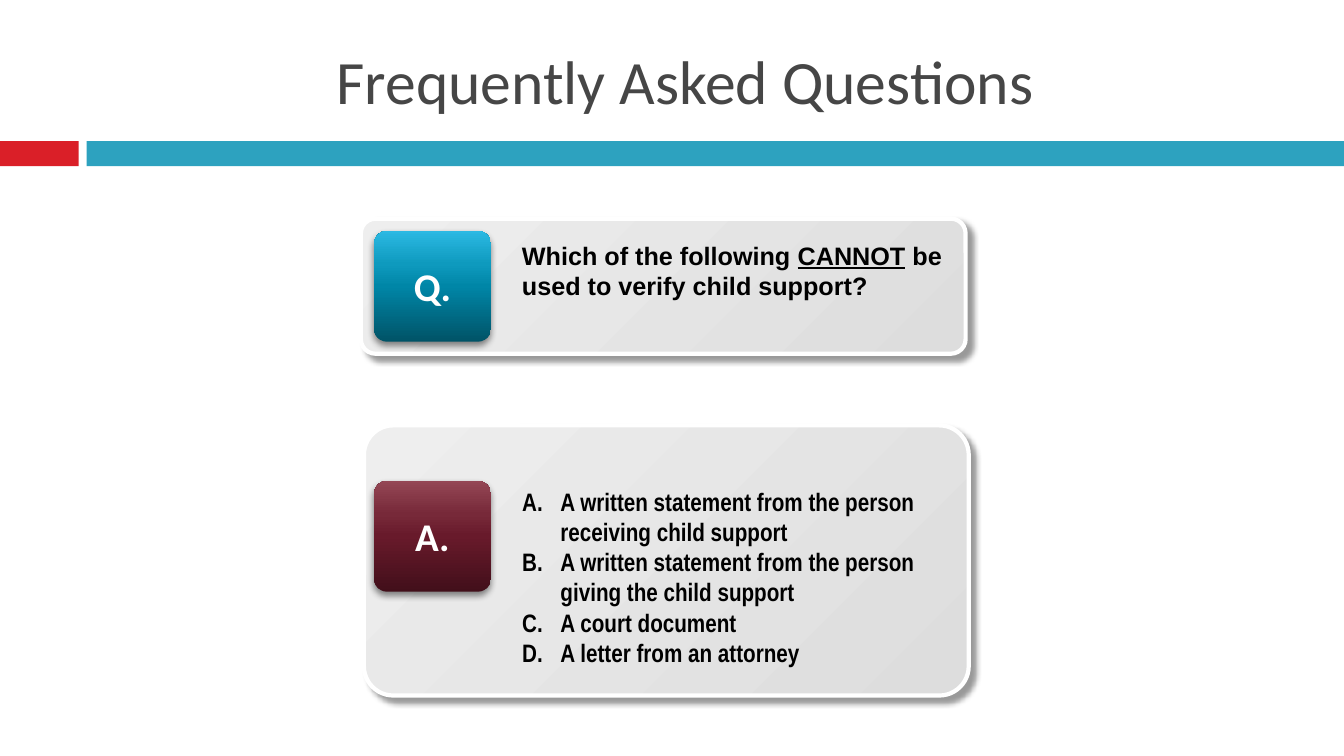
from lxml.etree import SubElement
from pptx import Presentation
from pptx.dml.color import RGBColor
from pptx.enum.shapes import MSO_SHAPE as Preset
from pptx.enum.text import MSO_ANCHOR as Anchor, MSO_AUTO_SIZE as AutoSize, PP_ALIGN as Align
from pptx.oxml.ns import qn
from pptx.util import Inches, Pt

SLIDE_WIDTH, SLIDE_HEIGHT = Inches(13.333), Inches(7.5)
COLORS = {"red": "DA1F28", "teal": "2DA2BF", "title": "464646", "white": "FFFFFF", "black": "000000"}
GRADIENTS = {
    "card": {0: "EEEEEE", 100: "DDDDDD"},
    "question": {0: "005367", 50: "0086A7", 70: "0E9ABE", 100: "2CB9E3"},
    "answer": {0: "420F1A", 50: "681A2B", 70: "772939", 100: "944755"},
}
QUESTION = [("Which of the following ", False), ("CANNOT", True), (" be used to verify child support?", False)]
ANSWERS = [
    "A written statement from the person receiving child support",
    "A written statement from the person giving the child support",
    "A court document",
    "A letter from an attorney",
]
QUESTION_CARD = (26.85, 28.93, 45, 17.87)
ANSWER_CARD = (27.08, 56.27, 45, 35.73)
BADGE_SIZE = (8.7, 14.67)
TEXT_GAP = 1.57
TEXT_WIDTH = 33


def to_lengths(box):
    """Turn a box in percent of the slide into lengths."""
    left, top, width, height = box
    return [int(share * side / 100) for share, side in
            ((left, SLIDE_WIDTH), (top, SLIDE_HEIGHT), (width, SLIDE_WIDTH), (height, SLIDE_HEIGHT))]


def place(shape, box):
    """Move a shape to a box."""
    shape.left, shape.top, shape.width, shape.height = to_lengths(box)


def style_font(font, name, size, color, bold=False):
    """Set the face, size, colour and weight of a font."""
    font.name, font.size, font.bold = name, Pt(size), bold
    font.color.rgb = RGBColor.from_string(COLORS[color])


def add_color(parent, color, alpha=100):
    """Add a colour with its opacity to an XML element."""
    element = SubElement(parent, qn("a:srgbClr"), val=color)
    SubElement(element, qn("a:alpha"), val=str(alpha * 1000))


def add_glossy_box(slide, box, corner, gradient, angle, shadow):
    """Add a rounded box with a gradient and a drop shadow."""
    shape = slide.shapes.add_shape(Preset.ROUNDED_RECTANGLE, *to_lengths(box))
    shape.adjustments[0] = corner
    properties = shape.element.spPr
    fill = SubElement(properties, qn("a:gradFill"), rotWithShape="1")
    stops = SubElement(fill, qn("a:gsLst"))
    for position, color in GRADIENTS[gradient].items():
        add_color(SubElement(stops, qn("a:gs"), pos=str(position * 1000)), color)
    SubElement(fill, qn("a:lin"), ang=str(angle * 60000), scaled="0")
    shape.line.fill.background()
    shape.shadow.inherit = False
    alpha, blur, distance, direction = shadow
    outer = SubElement(properties.find(qn("a:effectLst")), qn("a:outerShdw"),
                       blurRad=str(Pt(blur)), dist=str(Pt(distance)),
                       dir=str(direction * 60000), algn="ctr", rotWithShape="0")
    add_color(outer, COLORS["black"], alpha)
    return shape


def add_header(slide, box):
    """Place the title and the two bars below it."""
    left, top, width, height = box
    title = slide.shapes.title
    place(title, (left + 17.55, top + 3.33, 66.9, 14.4))
    title.text_frame.text = "Frequently Asked Questions"
    title.text_frame.vertical_anchor = Anchor.MIDDLE
    paragraph = title.text_frame.paragraphs[0]
    paragraph.alignment = Align.CENTER
    style_font(paragraph.font, "Calibri", 44, "title")
    bar_height = 3.33
    for color, start, end in (("red", 0, 5.85), ("teal", 6.45, width)):
        bar_box = (left + start, top + height - bar_height, end - start, bar_height)
        bar = slide.shapes.add_shape(Preset.RECTANGLE, *to_lengths(bar_box))
        bar.fill.solid()
        bar.fill.fore_color.rgb = RGBColor.from_string(COLORS[color])
        bar.line.fill.background()
        bar.shadow.inherit = False


def add_card(slide, box, inset, letter, gradient):
    """Draw a card with its letter badge and return the corner for its text."""
    card = add_glossy_box(slide, box, 0.109, "card", 45, (40, 4, 5, 45))
    card.line.color.rgb = RGBColor.from_string(COLORS["white"])
    card.line.width = Pt(3)
    left, top = box[0] + inset[0], box[1] + inset[1]
    badge = add_glossy_box(slide, (left, top, *BADGE_SIZE), 0.119, gradient, 270, (45, 5, 3, 90))
    frame = badge.text_frame
    frame.word_wrap = False
    frame.vertical_anchor = Anchor.MIDDLE
    frame.text = letter
    paragraph = frame.paragraphs[0]
    paragraph.alignment = Align.CENTER
    style_font(paragraph.font, "Calibri", 28, "white", True)
    return left + BADGE_SIZE[0] + TEXT_GAP, top


def add_question(slide, box):
    """Fill the question card."""
    left, top = add_card(slide, box, (0.98, 1.6), "Q.", "question")
    text_box = slide.shapes.add_textbox(*to_lengths((left, top + 0.54, TEXT_WIDTH, 9.47)))
    text_box.text_frame.word_wrap = True
    paragraph = text_box.text_frame.paragraphs[0]
    style_font(paragraph.font, "Arial", 18, "black", True)
    for text, underlined in QUESTION:
        run = paragraph.add_run()
        run.text = text
        run.font.underline = underlined


def add_answers(slide, box):
    """Fill the answer card with the lettered list."""
    left, top = add_card(slide, box, (0.75, 7.33), "A.", "answer")
    body = slide.placeholders[1]
    place(body, (left, top, TEXT_WIDTH, 25.6))
    body.element.getparent().append(body.element)
    frame = body.text_frame
    frame.auto_size = AutoSize.NONE
    frame.text = "\n".join(ANSWERS)
    for paragraph in frame.paragraphs:
        properties = paragraph._p.get_or_add_pPr()
        properties.set("marL", str(Inches(0.38)))
        properties.set("indent", str(-Inches(0.38)))
        SubElement(properties, qn("a:buFont"), typeface="Arial Narrow")
        SubElement(properties, qn("a:buAutoNum"), type="alphaUcPeriod")
        paragraph.space_before = Pt(0)
        style_font(paragraph.font, "Arial Narrow", 18, "black", True)


def main():
    """Build the slide and save it."""
    presentation = Presentation()
    presentation.slide_width, presentation.slide_height = SLIDE_WIDTH, SLIDE_HEIGHT
    slide = presentation.slides.add_slide(presentation.slide_layouts[1])
    add_header(slide, (0, 0, 100, 22))
    add_question(slide, QUESTION_CARD)
    add_answers(slide, ANSWER_CARD)
    presentation.save("out.pptx")


if __name__ == "__main__":
    main()
